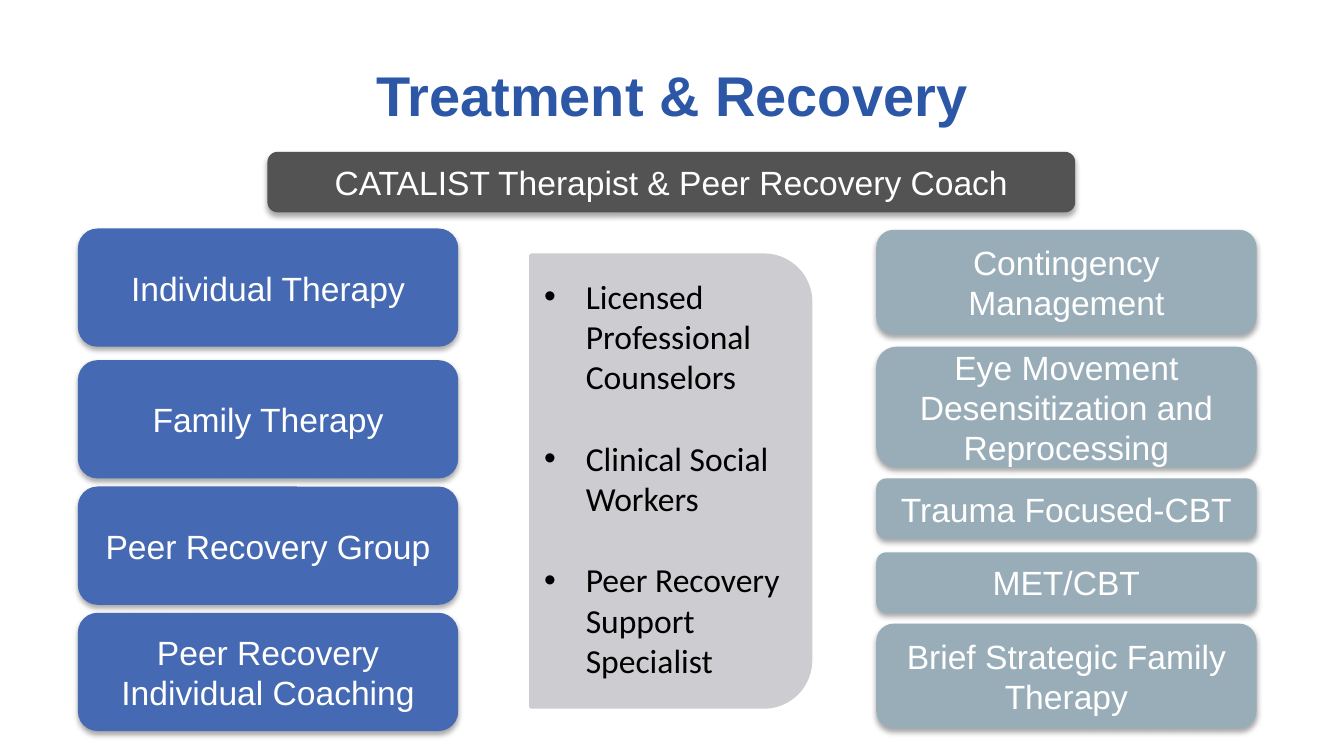
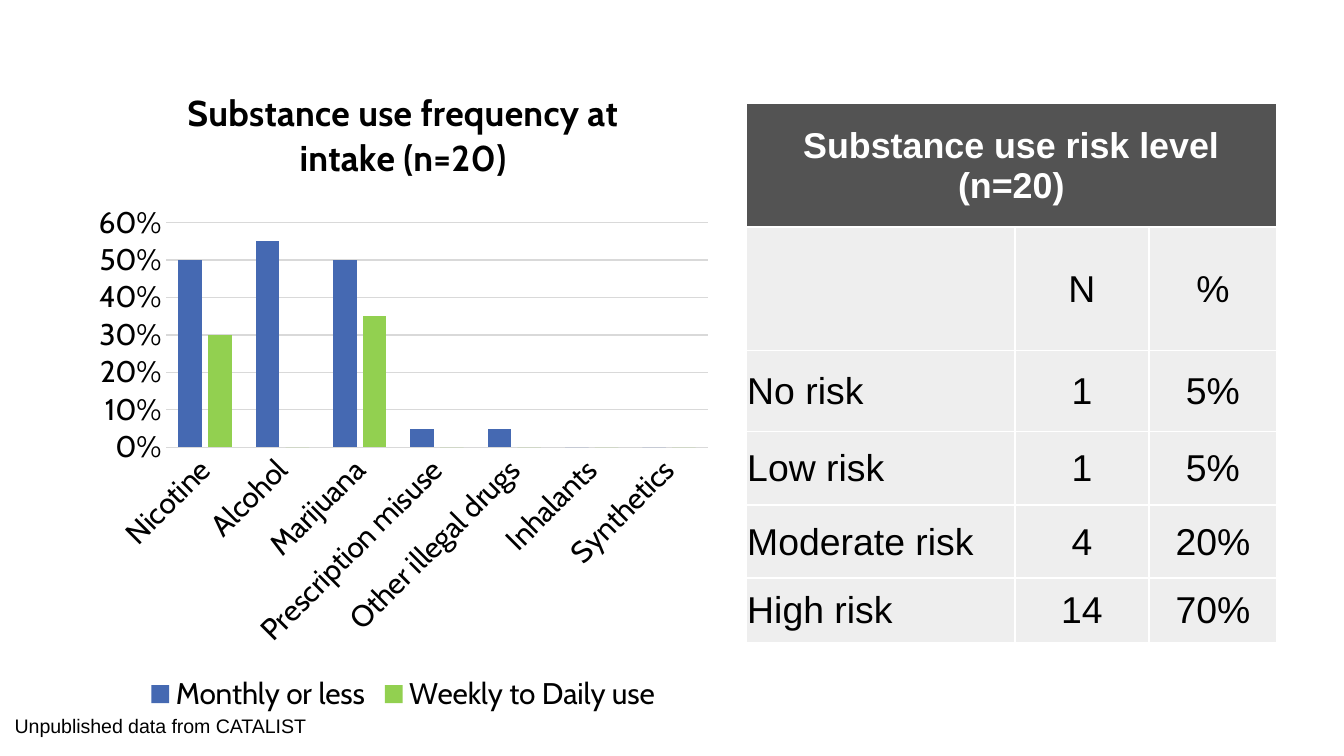
import pptx
import pptx.util
import pptx.chart.data
import pptx.dml.color
import pptx.enum.chart
import pptx.enum.shapes
import pptx.enum.text
import pptx.oxml
import pptx.oxml.ns
from pptx.util import Inches

COLORS = {
    "title": "2C57A7", "dark": "535353", "blue": "4569B2", "steel": "99ADB9",
    "panel": "CDCCD0", "green": "92D050", "grid": "D9D9D9", "cell": "EEEEEE",
    "white": "FFFFFF", "black": "000000",
}
RGB = {name: pptx.dml.color.RGBColor.from_string(value) for name, value in COLORS.items()}
NAMESPACE = pptx.oxml.ns.nsdecls("a")
CENTER = pptx.enum.text.PP_ALIGN.CENTER
LEFT = pptx.enum.text.PP_ALIGN.LEFT
MIDDLE = pptx.enum.text.MSO_ANCHOR.MIDDLE
GROW = pptx.enum.text.MSO_AUTO_SIZE.SHAPE_TO_FIT_TEXT


def style_font(font, size, color, name="Arial", bold=False):
    font.size = pptx.util.Pt(size)
    font.name = name
    font.bold = bold
    font.color.rgb = RGB[color]


def add_text(paragraph, text, size, color, name="Arial", bold=False, align=None):
    paragraph.alignment = align
    run = paragraph.add_run()
    run.text = text
    style_font(run.font, size, color, name, bold)


# Widescreen, 16 to 9
presentation = pptx.Presentation()
presentation.slide_width = Inches(10)
presentation.slide_height = Inches(10) * 9 // 16

# Slide 1: treatment and recovery
slide = presentation.slides.add_slide(presentation.slide_layouts[5])
title = slide.shapes.title
title.left, title.top, title.width, title.height = Inches(0), Inches(0.29), Inches(10), Inches(0.88)
title.text_frame.auto_size = pptx.enum.text.MSO_AUTO_SIZE.NONE
title.text_frame.vertical_anchor = MIDDLE
title.text_frame.paragraphs[0].line_spacing = 0.9
add_text(title.text_frame.paragraphs[0], "Treatment & Recovery", 30, "title", bold=True, align=CENTER)

# Staff panel, turned so that its rounded corners face right
panel = slide.shapes.add_shape(
    pptx.enum.shapes.MSO_SHAPE.ROUND_2_SAME_RECTANGLE,
    Inches(3.31), Inches(2.54), Inches(3.36), Inches(2.08))
panel.rotation = 90
panel.shadow.inherit = False
panel.fill.solid()
panel.fill.fore_color.rgb = RGB["panel"]
panel.line.color.rgb = RGB["panel"]
panel.line.width = pptx.util.Pt(2)
frame = panel.text_frame
frame.word_wrap = True
frame.vertical_anchor = pptx.enum.text.MSO_ANCHOR.TOP
frame._txBody.bodyPr.set("vert", "vert270")
staff = ["Licensed Professional Counselors", "Clinical Social Workers", "Peer Recovery Support Specialist"]
for index, role in enumerate(staff):
    paragraph = frame.add_paragraph() if index else frame.paragraphs[0]
    properties = paragraph._p.get_or_add_pPr()
    properties.set("marL", str(Inches(0.31)))
    properties.set("indent", str(-Inches(0.31)))
    properties.append(pptx.oxml.parse_xml(f'<a:buFont {NAMESPACE} typeface="Arial"/>'))
    properties.append(pptx.oxml.parse_xml(f'<a:buChar {NAMESPACE} char="•"/>'))
    if index:
        paragraph.space_before = pptx.util.Pt(22)
    add_text(paragraph, role, 18, "black", "Calibri", align=LEFT)

# Shadowed boxes: columns of (left, width, color, [(top, height, label)])
columns = [
    (1.99, 6.01, "dark", [(1.13, 0.45, "CATALIST Therapist & Peer Recovery Coach")]),
    (0.58, 2.83, "blue", [
        (1.7, 0.88, "Individual Therapy"),
        (2.68, 0.88, "Family Therapy"),
        (3.62, 0.88, "Peer Recovery Group"),
        (4.56, 0.88, "Peer Recovery Individual Coaching")]),
    (6.52, 2.83, "steel", [
        (1.71, 0.78, "Contingency Management"),
        (2.58, 0.9, "Eye Movement Desensitization and Reprocessing"),
        (3.56, 0.45, "Trauma Focused-CBT"),
        (4.11, 0.45, "MET/CBT"),
        (4.64, 0.78, "Brief Strategic Family Therapy")]),
]
shadow_xml = (
    f'<a:outerShdw {NAMESPACE} blurRad="38100" dist="22860" dir="5400000" rotWithShape="0">'
    f'<a:srgbClr val="{COLORS["black"]}"><a:alpha val="35000"/></a:srgbClr></a:outerShdw>')
for left, width, color, boxes in columns:
    for top, height, label in boxes:
        box = slide.shapes.add_shape(
            pptx.enum.shapes.MSO_SHAPE.ROUNDED_RECTANGLE,
            Inches(left), Inches(top), Inches(width), Inches(height))
        box.fill.solid()
        box.fill.fore_color.rgb = RGB[color]
        box.line.fill.background()
        box.shadow.inherit = False
        effects = box._element.spPr.find(pptx.oxml.ns.qn("a:effectLst"))
        effects.append(pptx.oxml.parse_xml(shadow_xml))
        frame = box.text_frame
        frame.word_wrap = True
        frame.auto_size = GROW
        frame.vertical_anchor = MIDDLE
        frame.margin_left = frame.margin_right = frame.margin_top = frame.margin_bottom = Inches(0.05)
        add_text(frame.paragraphs[0], label, 18, "white", align=CENTER)

# Slide 2: substance use
slide = presentation.slides.add_slide(presentation.slide_layouts[6])

# Frequency chart
chart_data = pptx.chart.data.CategoryChartData(number_format="0%")
chart_data.categories = ["Nicotine", "Alcohol", "Marijuana", "Prescription misuse",
                         "Other illegal drugs", "Inhalants", "Synthetics"]
chart_data.add_series("Monthly or less", [0.5, 0.55, 0.5, 0.05, 0.05, 0, 0])
chart_data.add_series("Weekly to Daily use", [0.3, 0, 0.35, 0, 0, 0, 0])
chart = slide.shapes.add_chart(
    pptx.enum.chart.XL_CHART_TYPE.COLUMN_CLUSTERED,
    Inches(0.64), Inches(0.45), Inches(4.72), Inches(4.89), chart_data).chart
style_font(chart.font, 16, "black", "Cabin")
chart.has_title = True
add_text(chart.chart_title.text_frame.paragraphs[0],
         "Substance use frequency at intake (n=20)", 19.2, "black", "Cabin", bold=True)
chart.chart_title.include_in_layout = False
chart.has_legend = True
chart.legend.position = pptx.enum.chart.XL_LEGEND_POSITION.BOTTOM
chart.legend.include_in_layout = False
style_font(chart.legend.font, 16, "black", "Cabin")

plot = chart.plots[0]
plot.vary_by_categories = False
plot.gap_width = 103
plot.overlap = -27
for series, color in zip(plot.series, ["blue", "green"]):
    series.format.fill.solid()
    series.format.fill.fore_color.rgb = RGB[color]

category_axis, value_axis = chart.category_axis, chart.value_axis
for axis in (category_axis, value_axis):
    axis.major_tick_mark = axis.minor_tick_mark = pptx.enum.chart.XL_TICK_MARK.NONE
    style_font(axis.tick_labels.font, 16, "black", "Cabin")
category_axis._element.txPr.bodyPr.set("rot", "-2700000")
value_axis.format.line.fill.background()
value_axis.minimum_scale = 0
value_axis.maximum_scale = 0.6
value_axis.major_unit = 0.1
value_axis.tick_labels.number_format = "0%"
value_axis.tick_labels.number_format_is_linked = False
for line in (category_axis.format.line, value_axis.major_gridlines.format.line):
    line.color.rgb = RGB["grid"]
    line.width = pptx.util.Pt(0.75)

# Risk table
rows = [
    ("Substance use risk level (n=20)", "", ""),
    ("", "N", "%"),
    ("No risk", "1", "5%"),
    ("Low risk", "1", "5%"),
    ("Moderate risk", "4", "20%"),
    ("High risk", "14", "70%"),
]
table = slide.shapes.add_table(
    len(rows), 3, Inches(5.55), Inches(0.77), Inches(3.95), Inches(4.01)).table
for column, width in zip(table.columns, [2, 1, 0.95]):
    column.width = Inches(width)
for row, height in zip(table.rows, [0.92, 0.92, 0.6, 0.55, 0.54, 0.48]):
    row.height = Inches(height)
table.cell(0, 0).merge(table.cell(0, 2))
for row_index, values in enumerate(rows):
    header = row_index == 0
    for column_index, value in enumerate(values):
        cell = table.cell(row_index, column_index)
        cell.vertical_anchor = MIDDLE
        cell.margin_left = cell.margin_right = cell.margin_top = Inches(0.01)
        cell.margin_bottom = 0
        properties = cell._tc.get_or_add_tcPr()
        for side in ("lnL", "lnR", "lnT", "lnB"):
            properties.append(pptx.oxml.parse_xml(
                f'<a:{side} {NAMESPACE} w="12700"><a:solidFill>'
                f'<a:srgbClr val="{COLORS["white"]}"/></a:solidFill></a:{side}>'))
        cell.fill.solid()
        cell.fill.fore_color.rgb = RGB["dark" if header else "cell"]
        if value:
            add_text(cell.text_frame.paragraphs[0], value, 19.2 if header else 20,
                     "white" if header else "black", bold=header,
                     align=CENTER if header or column_index else LEFT)

# Source note
note = slide.shapes.add_textbox(Inches(0.06), Inches(5.26), Inches(3.87), Inches(0.28))
frame = note.text_frame
frame.word_wrap = True
frame.auto_size = GROW
frame.margin_left = frame.margin_right = frame.margin_top = frame.margin_bottom = Inches(0.05)
add_text(frame.paragraphs[0], "Unpublished data from CATALIST", 10.5, "black")

presentation.save("out.pptx")
